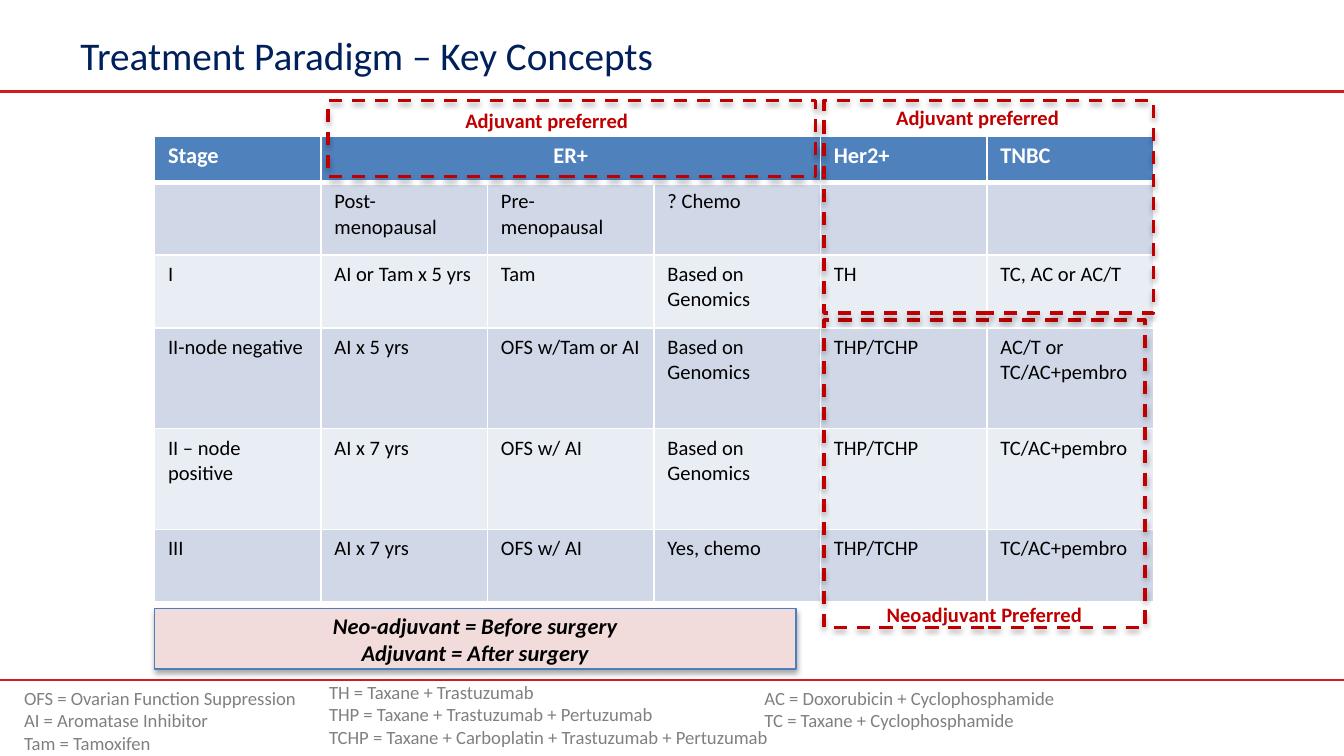
from lxml import etree
from pptx import Presentation
from pptx.dml.color import RGBColor
from pptx.enum.dml import MSO_LINE
from pptx.enum.shapes import MSO_CONNECTOR, MSO_SHAPE
from pptx.enum.text import MSO_ANCHOR, PP_ALIGN
from pptx.oxml import parse_xml
from pptx.oxml.ns import nsdecls, qn
from pptx.util import Pt

NAVY = RGBColor(0x00, 0x20, 0x5B)
RULE_RED = RGBColor(0xCF, 0x1C, 0x20)
MARK_RED = RGBColor(0xC0, 0x00, 0x00)
HEADER_BLUE = RGBColor(0x4F, 0x81, 0xBD)
EDGE_BLUE = RGBColor(0x4B, 0x7E, 0xBC)
BAND_DARK = RGBColor(0xD0, 0xD8, 0xE8)
BAND_LIGHT = RGBColor(0xE9, 0xED, 0xF4)
PINK = RGBColor(0xF2, 0xDC, 0xDB)
GRAY = RGBColor(0x80, 0x80, 0x80)
BLACK = RGBColor(0, 0, 0)
WHITE = RGBColor(255, 255, 255)

WIDTH, HEIGHT = 720, 405
TITLE = "Treatment Paradigm – Key Concepts"
RULES = [(364.3, 1), (49, 1.25)]  # height on page, line width

TABLE_LEFT, TABLE_TOP, COLUMN_WIDTH = 82.8, 72.7, 89.2
ROW_HEIGHTS = [25, 39, 39, 54, 54, 39]
ROWS = [
    ["Stage", "ER+", "", "", "Her2+", "TNBC"],
    ["", "Post- menopausal", "Pre- menopausal", "? Chemo", "", ""],
    ["I", "AI or Tam x 5 yrs", "Tam", "Based on Genomics", "TH", "TC, AC or AC/T"],
    ["II-node negative", "AI x 5 yrs", "OFS w/Tam or AI", "Based on Genomics",
     "THP/TCHP", "AC/T or TC/AC+pembro"],
    ["II – node positive", "AI x 7 yrs", "OFS w/ AI", "Based on Genomics",
     "THP/TCHP", "TC/AC+pembro"],
    ["III", "AI x 7 yrs", "OFS w/ AI", "Yes, chemo", "THP/TCHP", "TC/AC+pembro"],
]

# Dashed frame and its label: left, top, width, height
REGIONS = [
    ("Neoadjuvant Preferred", (441.4, 171.4, 172, 164.6), (449.3, 319, 156.2, 20.6)),
    ("Adjuvant preferred", (175.7, 53.8, 261.2, 41), (214.8, 54.2, 156.2, 20.6)),
    ("Adjuvant preferred", (441.4, 53.8, 176.6, 114), (445.7, 52.6, 156.2, 20.6)),
]

DEFINITIONS = ["Neo-adjuvant = Before surgery", "Adjuvant = After surgery"]
DEFINITIONS_PLACE = (82.8, 326, 343.6, 32.4)

ABBREVIATIONS = [
    ((5.8, 364.3, 477.4, 32.4),
     ["OFS = Ovarian Function Suppression", "AI = Aromatase Inhibitor", "Tam = Tamoxifen"]),
    ((169.2, 361.2, 360, 43.6),
     ["TH = Taxane + Trastuzumab", "THP = Taxane + Trastuzumab + Pertuzumab",
      "TCHP = Taxane + Carboplatin + Trastuzumab + Pertuzumab"]),
    ((402.5, 364.3, 360, 31.5),
     ["AC = Doxorubicin + Cyclophosphamide", "TC = Taxane + Cyclophosphamide"]),
]


def points(place):
    return [Pt(value) for value in place]


def write(frame, lines, size=11, color=BLACK, bold=False, italic=False,
          align=PP_ALIGN.LEFT, anchor=MSO_ANCHOR.TOP):
    frame.word_wrap = True
    frame.vertical_anchor = anchor
    for index, line in enumerate(lines):
        para = frame.add_paragraph() if index else frame.paragraphs[0]
        para.alignment = align
        span = para.add_run()
        span.text = line
        font = span.font
        font.name, font.size, font.bold, font.italic = "Calibri", Pt(size), bold, italic
        font.color.rgb = color


def add_text(page, place, lines, **style):
    box = page.shapes.add_textbox(*points(place))
    write(box.text_frame, lines, **style)


def add_rule(page, y, width):
    rule = page.shapes.add_connector(MSO_CONNECTOR.STRAIGHT, 0, Pt(y), Pt(WIDTH), Pt(y))
    rule.line.color.rgb = RULE_RED
    rule.line.width = Pt(width)
    etree.SubElement(rule._element.spPr, qn("a:effectLst"))


def add_shadowed_box(page, place, line_color, line_width):
    box = page.shapes.add_shape(MSO_SHAPE.RECTANGLE, *points(place))
    box.line.color.rgb = line_color
    box.line.width = Pt(line_width)
    box.fill.background()
    box._element.spPr.append(parse_xml(
        f'<a:effectLst {nsdecls("a")}><a:outerShdw blurRad="{Pt(3.1)}" dist="{Pt(1.8)}" '
        'dir="5400000" rotWithShape="0"><a:srgbClr val="000000"><a:alpha val="35000"/>'
        '</a:srgbClr></a:outerShdw></a:effectLst>'))
    return box


def add_region(page, label, frame_place, label_place):
    frame = add_shadowed_box(page, frame_place, MARK_RED, 1.75)
    frame.line.dash_style = MSO_LINE.DASH
    add_text(page, label_place, [label], color=MARK_RED, bold=True, align=PP_ALIGN.CENTER)


def set_borders(cell, top, bottom):
    properties = cell._tc.get_or_add_tcPr()
    widths = {"lnL": 1, "lnR": 1, "lnT": top, "lnB": bottom}
    for position, (side, width) in enumerate(widths.items()):
        properties.insert(position, parse_xml(
            f'<a:{side} {nsdecls("a")} w="{Pt(width)}"><a:solidFill>'
            f'<a:srgbClr val="{WHITE}"/></a:solidFill></a:{side}>'))


def add_treatment_table(page):
    column_count = len(ROWS[0])
    place = (TABLE_LEFT, TABLE_TOP, COLUMN_WIDTH * column_count, sum(ROW_HEIGHTS))
    table = page.shapes.add_table(len(ROWS), column_count, *points(place)).table
    for column in table.columns:
        column.width = Pt(COLUMN_WIDTH)
    for r, (texts, height) in enumerate(zip(ROWS, ROW_HEIGHTS)):
        table.rows[r].height = Pt(height)
        header = r == 0
        for c, text in enumerate(texts):
            cell = table.cell(r, c)
            cell.fill.solid()
            cell.fill.fore_color.rgb = (
                HEADER_BLUE if header else BAND_DARK if r % 2 else BAND_LIGHT)
            set_borders(cell, top=3 if r == 1 else 1, bottom=3 if header else 1)
            if text:
                write(cell.text_frame, [text], size=12 if header else 11,
                      color=WHITE if header else BLACK, bold=header,
                      align=PP_ALIGN.CENTER if text == "ER+" else PP_ALIGN.LEFT)
    table.cell(0, 1).merge(table.cell(0, 3))


def main():
    deck = Presentation()
    deck.slide_width, deck.slide_height = Pt(WIDTH), Pt(HEIGHT)
    page = deck.slides.add_slide(deck.slide_layouts[6])
    for y, width in RULES:
        add_rule(page, y, width)
    add_text(page, (36, 16.6, 648, 25.2), [TITLE], size=21, color=NAVY,
             anchor=MSO_ANCHOR.MIDDLE)
    add_treatment_table(page)
    for region in REGIONS:
        add_region(page, *region)
    box = add_shadowed_box(page, DEFINITIONS_PLACE, EDGE_BLUE, 0.75)
    box.fill.solid()
    box.fill.fore_color.rgb = PINK
    write(box.text_frame, DEFINITIONS, size=12, bold=True, italic=True,
          align=PP_ALIGN.CENTER, anchor=MSO_ANCHOR.MIDDLE)
    for place, lines in ABBREVIATIONS:
        add_text(page, place, lines, size=10, color=GRAY)
    deck.save("out.pptx")


if __name__ == "__main__":
    main()
